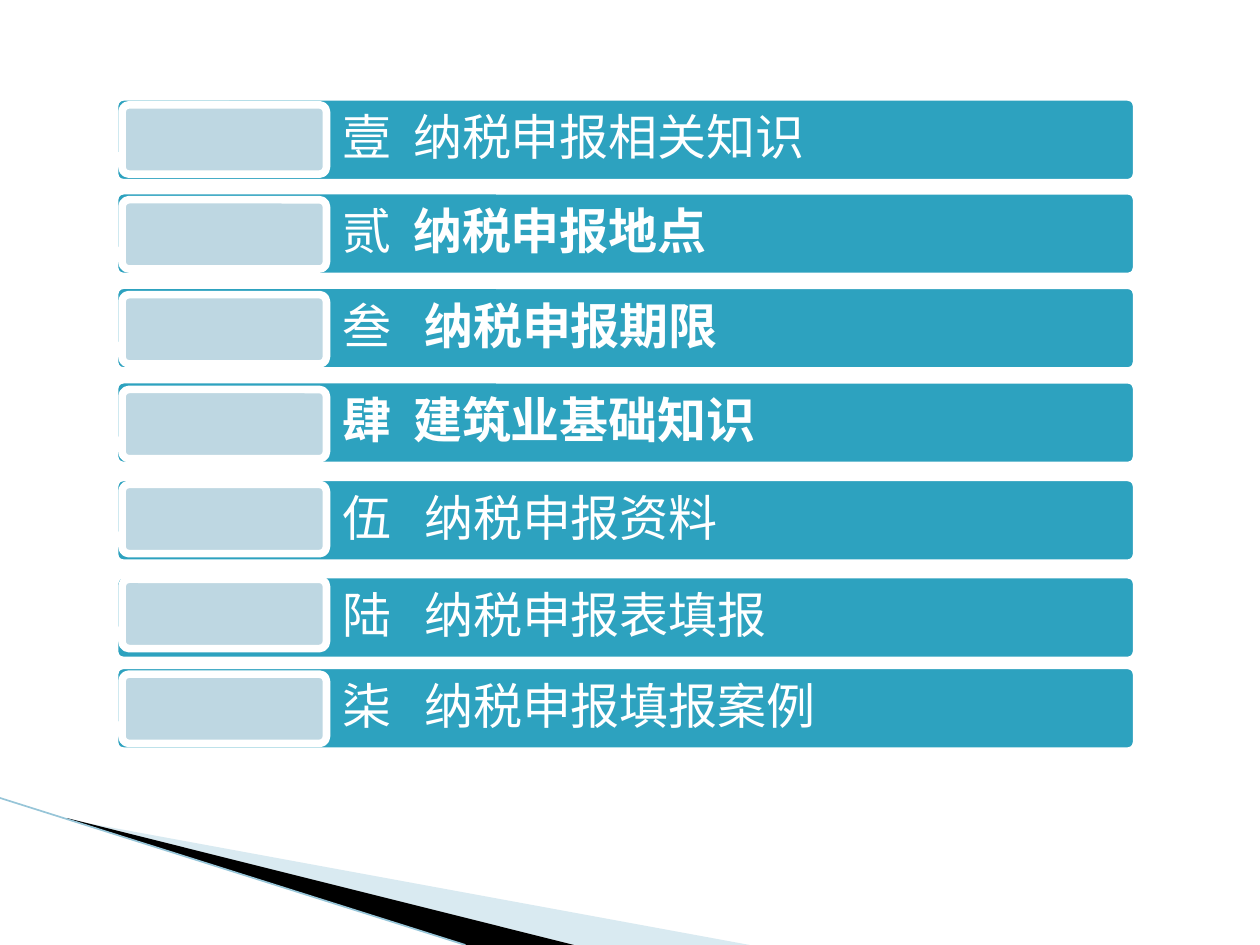
"""Build the contents slide of a tax filing course."""
from dataclasses import dataclass

from lxml.etree import SubElement
from pptx import Presentation
from pptx.dml.color import RGBColor as RGB
from pptx.enum.shapes import MSO_CONNECTOR as LINE, MSO_SHAPE as SHAPE
from pptx.enum.text import MSO_ANCHOR as ANCHOR
from pptx.oxml.ns import qn
from pptx.util import Pt

WHITE = RGB(0xFF, 0xFF, 0xFF)
BLACK = RGB(0, 0, 0)
TEAL = RGB(0x2D, 0xA2, 0xBF)
PALE = RGB(0xBE, 0xD7, 0xE2)
SKY = RGB(0xA0, 0xCB, 0xDC)
EDGE = RGB(0x97, 0xC5, 0xD8)
THIN = "Courier New"
HEAVY = "Noto Sans CJK SC"
NEAR, FAR = 40.5, 46.8
BAR_LEFT, BAR_WIDTH, BAR_HIGH = 65.5, 584, 49
TEXT_LEFT, TEXT_WIDTH = 187.2, 462.3
TAG_LEFT, TAG_TOP, TAG_STEP = 69.8, 59.9, 54.22
TAG_WIDTH, TAG_HIGH = 116.8, 39.6


@dataclass
class Item:
    """One entry of the contents list."""
    top: float
    mark: str
    title: str
    stop: float
    mark_bold: bool = False
    bold: bool = False


ITEMS = [
    Item(55.4, "壹", "纳税申报相关知识", NEAR),
    Item(109, "贰", "纳税申报地点", NEAR, bold=True),
    Item(163, "叁", "纳税申报期限", FAR, bold=True),
    Item(217, "肆", "建筑业基础知识", NEAR, True, True),
    Item(272.8, "伍", "纳税申报资料", FAR),
    Item(328.4, "陆", "纳税申报表填报", FAR),
    Item(380.2, "柒", "纳税申报填报案例", FAR),
]


def add_wedge(slide, points: list, color: RGB, alpha: int = 100) -> None:
    """Draw a filled outline through the points."""
    ends = [(Pt(x), Pt(y)) for x, y in points]
    pen = slide.shapes.build_freeform(*ends[0], scale=1.0)
    pen.add_line_segments(ends[1:], close=True)
    shape = pen.convert_to_shape()
    shape.shadow.inherit = False
    shape.fill.solid()
    shape.fill.fore_color.rgb = color
    shape.line.fill.background()
    if alpha < 100:
        tint = shape.fill._xPr.find(qn("a:solidFill"))[0]
        SubElement(tint, qn("a:alpha"), val=str(alpha * 1000))


def add_edge(slide, start: tuple, end: tuple) -> None:
    """Draw the thin line along the wedges."""
    line = slide.shapes.add_connector(
        LINE.STRAIGHT, *map(Pt, start), *map(Pt, end))
    line.line.color.rgb = EDGE
    line.line.width = Pt(0.95)
    SubElement(line._element.spPr, qn("a:effectLst"))


def add_plate(slide, box: tuple, color: RGB) -> None:
    """Draw a rounded plate with a white rim."""
    plate = slide.shapes.add_shape(SHAPE.ROUNDED_RECTANGLE, *map(Pt, box))
    plate.adjustments[0] = 0.1
    plate.shadow.inherit = False
    plate.fill.solid()
    plate.fill.fore_color.rgb = color
    plate.line.color.rgb = WHITE
    plate.line.width = Pt(4.33)


def add_label(slide, item: Item) -> None:
    """Write the numeral and the title of an item."""
    box = (TEXT_LEFT, item.top, TEXT_WIDTH, BAR_HIGH)
    frame = slide.shapes.add_textbox(*map(Pt, box)).text_frame
    frame.word_wrap = True
    frame.vertical_anchor = ANCHOR.MIDDLE
    frame.margin_left = frame.margin_right = Pt(8.4)
    frame.margin_top = frame.margin_bottom = Pt(8.4)
    para = frame.paragraphs[0]
    para.line_spacing = 0.9
    para.space_after = Pt(9.8)
    tabs = SubElement(para._p.get_or_add_pPr(), qn("a:tabLst"))
    SubElement(tabs, qn("a:tab"), pos=str(Pt(item.stop)), algn="l")
    para.font.size = Pt(28)
    para.font.color.rgb = WHITE
    parts = ((item.mark + "\t", item.mark_bold), (item.title, item.bold))
    for text, bold in parts:
        run = para.add_run()
        run.text = text
        run.font.name = HEAVY if bold else THIN
        run.font.bold = bold


def main() -> None:
    """Build and save the slide."""
    deck = Presentation()
    deck.slide_width, deck.slide_height = Pt(720), Pt(540)
    slide = deck.slides.add_slide(deck.slide_layouts[6])
    add_wedge(slide, [(39.6, 468.5), (428.4, 540), (328, 540), (39.6, 468)],
              SKY, 40)
    add_wedge(slide, [(38.2, 467.5), (328, 540), (266, 540), (38.8, 468)],
              BLACK)
    add_edge(slide, (0, 456), (266, 540))
    for row, item in enumerate(ITEMS):
        add_plate(slide, (BAR_LEFT, item.top, BAR_WIDTH, BAR_HIGH), TEAL)
        add_label(slide, item)
        top = TAG_TOP + row * TAG_STEP
        add_plate(slide, (TAG_LEFT, top, TAG_WIDTH, TAG_HIGH), PALE)
    deck.save("out.pptx")


if __name__ == "__main__":
    main()
